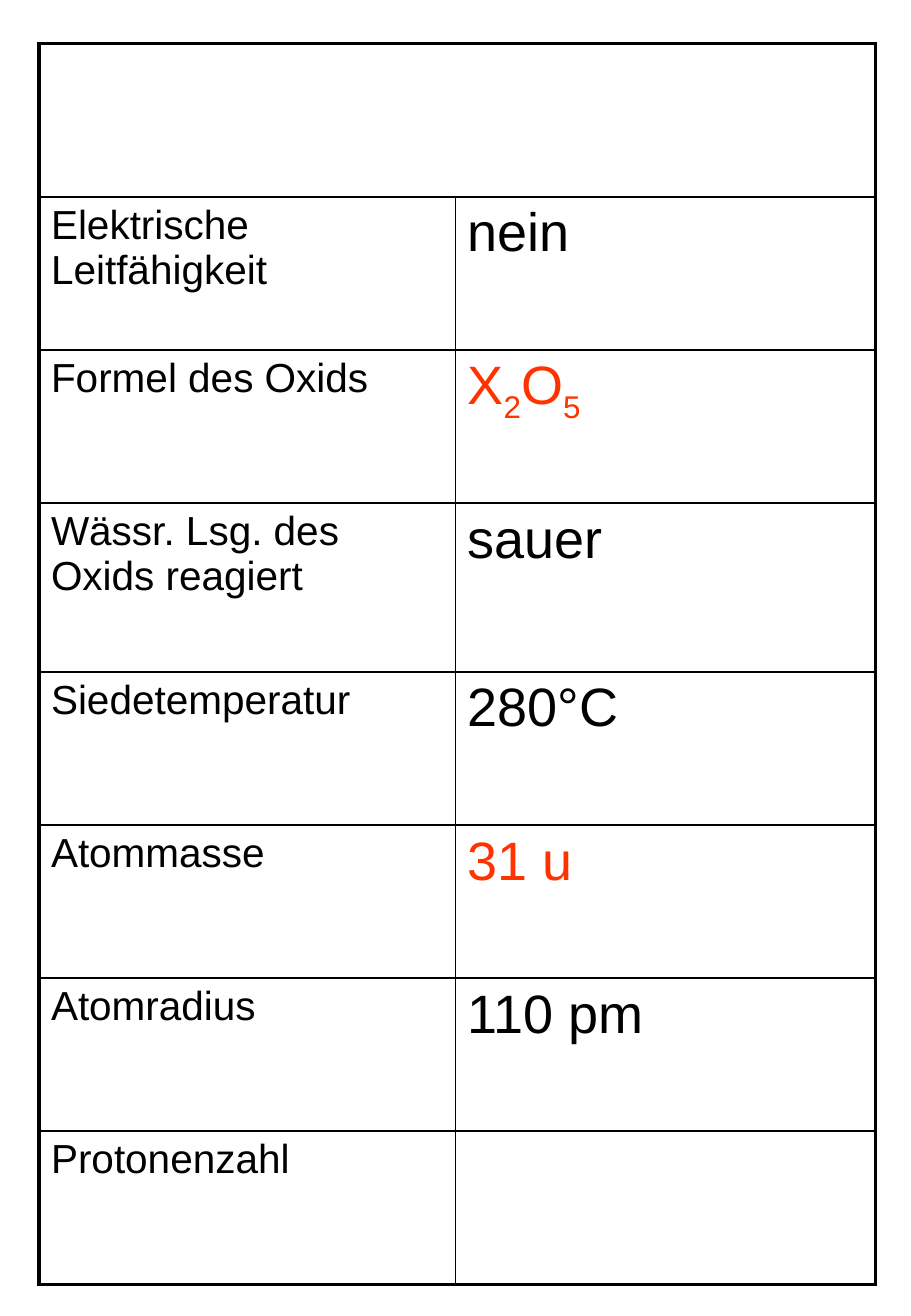
from lxml import etree
from pptx import Presentation
from pptx.dml.color import RGBColor
from pptx.oxml.ns import qn
from pptx.util import Inches, Pt

BLACK = RGBColor(0x00, 0x00, 0x00)
RED = RGBColor(0xFF, 0x33, 0x00)
FONT = "Arial"
LABEL_SIZE, VALUE_SIZE = Pt(24), Pt(32)
THIN, THICK = Pt(1), Pt(2.25)
COLS = [3.43, 3.46]
ROW, TALL_ROW, TALL_INDEX = 1.26, 1.39, 3

# Label, value as runs (every second run is a subscript), value colour
PROPERTIES = [
    ("Elektrische Leitfähigkeit", ["nein"], BLACK),
    ("Formel des Oxids", ["X", "2", "O", "5"], RED),
    ("Wässr. Lsg. des Oxids reagiert", ["sauer"], BLACK),
    ("Siedetemperatur", ["280°C"], BLACK),
    ("Atommasse", ["31 u"], RED),
    ("Atomradius", ["110 pm"], BLACK),
    ("Protonenzahl", [], BLACK),
]


def write_cell(cell, texts, size, color):
    p = cell.text_frame.paragraphs[0]
    for i, text in enumerate(texts):
        r = p.add_run()
        r.text = text
        r.font.name, r.font.size = FONT, size
        r.font.color.rgb = color
        if i % 2:
            r._r.get_or_add_rPr().set("baseline", "-25000")


def set_borders(cell, widths):
    """Draw the left, right, top and bottom borders, in that order."""
    tcPr = cell._tc.get_or_add_tcPr()
    for i, (side, width) in enumerate(zip("LRTB", widths)):
        ln = etree.Element(qn(f"a:ln{side}"), w=str(width))
        fill = etree.SubElement(ln, qn("a:solidFill"))
        etree.SubElement(fill, qn("a:srgbClr"), val=str(BLACK))
        tcPr.insert(i, ln)


def add_property_table(s, left, top, width, height):
    n_rows = len(PROPERTIES) + 1
    table = s.shapes.add_table(n_rows, len(COLS), left, top, width, height).table
    table.first_row = table.horz_banding = False
    for column, w in zip(table.columns, COLS):
        column.width = Inches(w)
    for i, row in enumerate(table.rows):
        row.height = Inches(TALL_ROW if i == TALL_INDEX else ROW)

    # Empty heading row across both columns
    table.cell(0, 0).merge(table.cell(0, 1))

    # Labels and values
    for i, (label, value, color) in enumerate(PROPERTIES, start=1):
        write_cell(table.cell(i, 0), [label], LABEL_SIZE, BLACK)
        write_cell(table.cell(i, 1), value, VALUE_SIZE, color)

    # Thick frame, thin inner lines
    for i in range(n_rows):
        for j in range(len(COLS)):
            cell = table.cell(i, j)
            cell.fill.background()
            outer = (j == 0, j == 1 or i == 0, i == 0, i == n_rows - 1)
            set_borders(cell, [THICK if edge else THIN for edge in outer])


def main():
    prs = Presentation()
    prs.slide_width, prs.slide_height = Inches(7.5), Inches(10.83)
    s = prs.slides.add_slide(prs.slide_layouts[6])
    add_property_table(s, Inches(0.32), Inches(0.36), Inches(6.89), Inches(10.21))
    prs.save("out.pptx")


if __name__ == "__main__":
    main()
